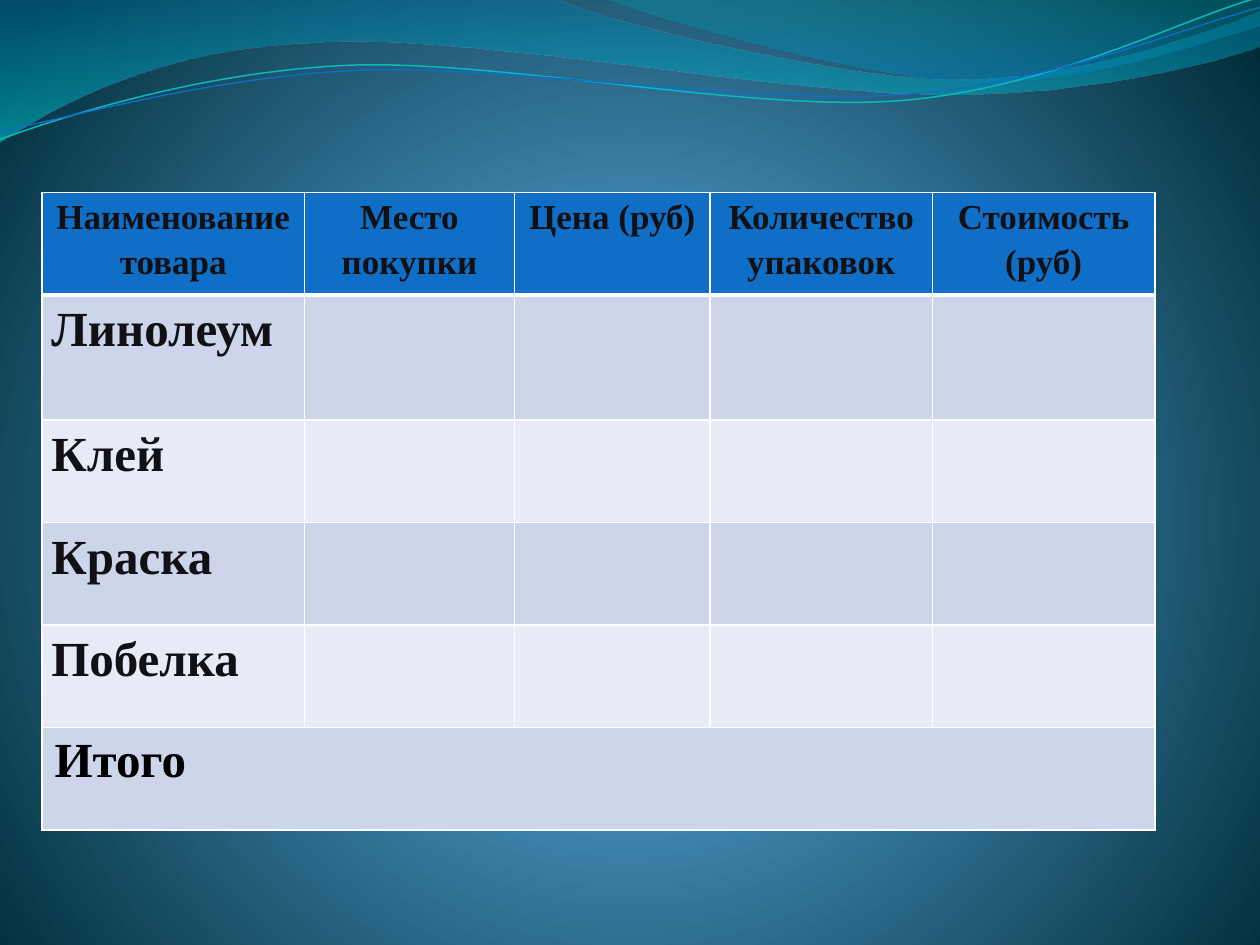
from lxml.etree import SubElement as Sub
from pptx import Presentation
from pptx.dml.color import RGBColor as RGB
from pptx.enum.text import PP_ALIGN as Align
from pptx.oxml import parse_xml
from pptx.oxml.ns import nsdecls, qn
from pptx.util import Pt

INK = RGB(0x11, 0x11, 0x15)
BLACK = RGB(0x00, 0x00, 0x00)
WHITE = RGB(0xFF, 0xFF, 0xFF)
BLUE = RGB(0x0F, 0x6F, 0xC6)
AQUA = RGB(0x0A, 0xB8, 0xBF)
BANDS = RGB(0xCC, 0xD5, 0xEA), RGB(0xE7, 0xEB, 0xF5)
GLOW = ((0, RGB(0x4A, 0xA0, 0xD6), 100), (25, RGB(0x4C, 0x98, 0xC7), 100),
        (100, RGB(0x00, 0x2C, 0x38), 100))
DEEP = ((0, RGB(0x00, 0x74, 0xA1), 45), (100, RGB(0x00, 0xC6, 0xCF), 55))
PALE = ((0, RGB(0x00, 0xA1, 0xA9), 30), (80, RGB(0x00, 0x8B, 0xBF), 45))
RADIAL = ('<a:path path="circle"><a:fillToRect l="10000" t="110000" '
          'r="10000" b="100000"/></a:path>')
LINEAR = '<a:lin ang="5400000" scaled="1"/>'

SHEETS = (
    (DEEP, [[(0, 0)], [(317, -0.7)], [(343, 12), (478, 45), (546, 45.4)],
            [(614, 45.4), (690, 19), (720, 6.5)], [(720.7, 26)],
            [(708, 32), (626, 55), (537, 54)],
            [(446, 54), (275, 20), (185, 24.3)],
            [(93, 26), (33, 60), (-0.7, 81.4)]]),
    (PALE, [[(345, -0.7)], [(366, 8), (491, 45), (554, 47)],
            [(616, 49.7), (692, 23), (720, 15)], [(720, 0)]]),
)
STRANDS = (
    (AQUA, 0.85, [[(0, 79.6)], [(35, 67), (114, 41), (199, 37.3)],
                  [(284, 33.8), (427, 64), (513, 57.6)],
                  [(600, 51), (675, 10.8), (719, -1.4)]]),
    (BLUE, 0.75, [[(0, 75)], [(34, 69), (118, 44), (204, 40.3)],
                  [(290, 36.7), (430, 60.5), (516, 54)],
                  [(602, 48), (678, 15), (720, 4.3)]]),
)
HEADS = ("Наименование товара", "Место покупки", "Цена (руб)",
         "Количество упаковок", "Стоимость (руб)")
GOODS = "Линолеум", "Клей", "Краска", "Побелка"
TOTAL = "Итого"
WIDTHS = 150, 120, 111.8, 127, 127.2
HEIGHTS = 58.5, 71.5, 58.5, 58.6, 58.6, 58.6


def blend(fill, root, stops, shade):
    """Fill the part under root with a gradient of (place, colour, alpha) stops."""
    fill.gradient()
    old = root.xpath(".//a:gradFill")[0]
    marks = "".join(
        f'<a:gs pos="{place * 1000}"><a:srgbClr val="{color}">'
        f'<a:alpha val="{alpha * 1000}"/></a:srgbClr></a:gs>'
        for place, color, alpha in stops)
    new = parse_xml(f'<a:gradFill {nsdecls("a")} rotWithShape="1">'
                    f'<a:gsLst>{marks}</a:gsLst>{shade}</a:gradFill>')
    old.getparent().replace(old, new)


def bend(shape, steps):
    """Join each run of three line points into one Bezier curve."""
    lines = iter(shape.element.xpath(".//a:lnTo"))
    for step in steps[1:]:
        parts = [next(lines) for _ in step]
        if len(parts) == 3:
            curve = parse_xml(f'<a:cubicBezTo {nsdecls("a")}/>')
            parts[0].addprevious(curve)
            for part in parts:
                curve.append(part[0])
                part.getparent().remove(part)


def draw(slide, left, top, steps, close):
    """Draw one curved outline from the given corner."""
    points = [(Pt(left + x), Pt(top + y)) for step in steps for x, y in step]
    pen = slide.shapes.build_freeform(*points[0])
    pen.add_line_segments(points[1:], close=close)
    shape = pen.convert_to_shape()
    shape.shadow.inherit = False
    bend(shape, steps)
    return shape


def add_waves(slide, left, top):
    """Draw the sheets and strands along the top of the slide."""
    for stops, steps in SHEETS:
        sheet = draw(slide, left, top, steps, True)
        blend(sheet.fill, sheet.element, stops, LINEAR)
        sheet.line.fill.background()
    for color, width, steps in STRANDS:
        strand = draw(slide, left, top, steps, False)
        strand.fill.background()
        strand.line.color.rgb = color
        strand.line.width = Pt(width)


def write(cell, text, size=28, color=INK, align=Align.LEFT, space=1.15,
          side=5.4, edge=0):
    """Write bold text in a cell with its margins and spacing."""
    cell.margin_left = cell.margin_right = Pt(side)
    cell.margin_top = cell.margin_bottom = Pt(edge)
    para = cell.text_frame.paragraphs[0]
    para.alignment, para.line_spacing = align, space
    run = para.add_run()
    run.text = text
    font = run.font
    font.name, font.size, font.bold = "Times New Roman", Pt(size), True
    font.color.rgb = color


def frame(cell, color, top=1, bottom=1):
    """Fill a cell and give it white borders."""
    cell.fill.solid()
    cell.fill.fore_color.rgb = color
    props = cell._tc.get_or_add_tcPr()
    sides = ("L", 1), ("R", 1), ("T", top), ("B", bottom)
    for i, (side, width) in enumerate(sides):
        line = Sub(props, qn(f"a:ln{side}"), w=str(Pt(width)))
        Sub(Sub(line, qn("a:solidFill")), qn("a:srgbClr"), val=str(WHITE))
        props.insert(i, line)


def add_costs(slide, left, top):
    """Place the cost table with its heads, goods and total row."""
    table = slide.shapes.add_table(
        len(HEIGHTS), len(WIDTHS), Pt(left), Pt(top),
        Pt(sum(WIDTHS)), Pt(sum(HEIGHTS))).table
    for col, width in zip(table.columns, WIDTHS):
        col.width = Pt(width)
    for i, (row, height) in enumerate(zip(table.rows, HEIGHTS)):
        row.height = Pt(height)
        for cell in row.cells:
            frame(cell, BANDS[(i - 1) % 2] if i else BLUE,
                  top=3 if i == 1 else 1, bottom=1 if i else 3)
    for i, head in enumerate(HEADS):
        write(table.cell(0, i), head, size=20, align=Align.CENTER)
    for i, good in enumerate(GOODS, 1):
        write(table.cell(i, 0), good)
    last = len(HEIGHTS) - 1
    total = table.cell(last, 0)
    total.merge(table.cell(last, len(WIDTHS) - 1))
    write(total, TOTAL, color=BLACK, space=1, side=7.2, edge=3.6)


def main():
    """Build the slide and save it."""
    deck = Presentation()
    deck.slide_width, deck.slide_height = Pt(720), Pt(540)
    slide = deck.slides.add_slide(deck.slide_layouts[6])
    blend(slide.background.fill, slide.element, GLOW, RADIAL)
    add_waves(slide, 0, 0)
    add_costs(slide, 24, 110)
    deck.save("out.pptx")


if __name__ == "__main__":
    main()
